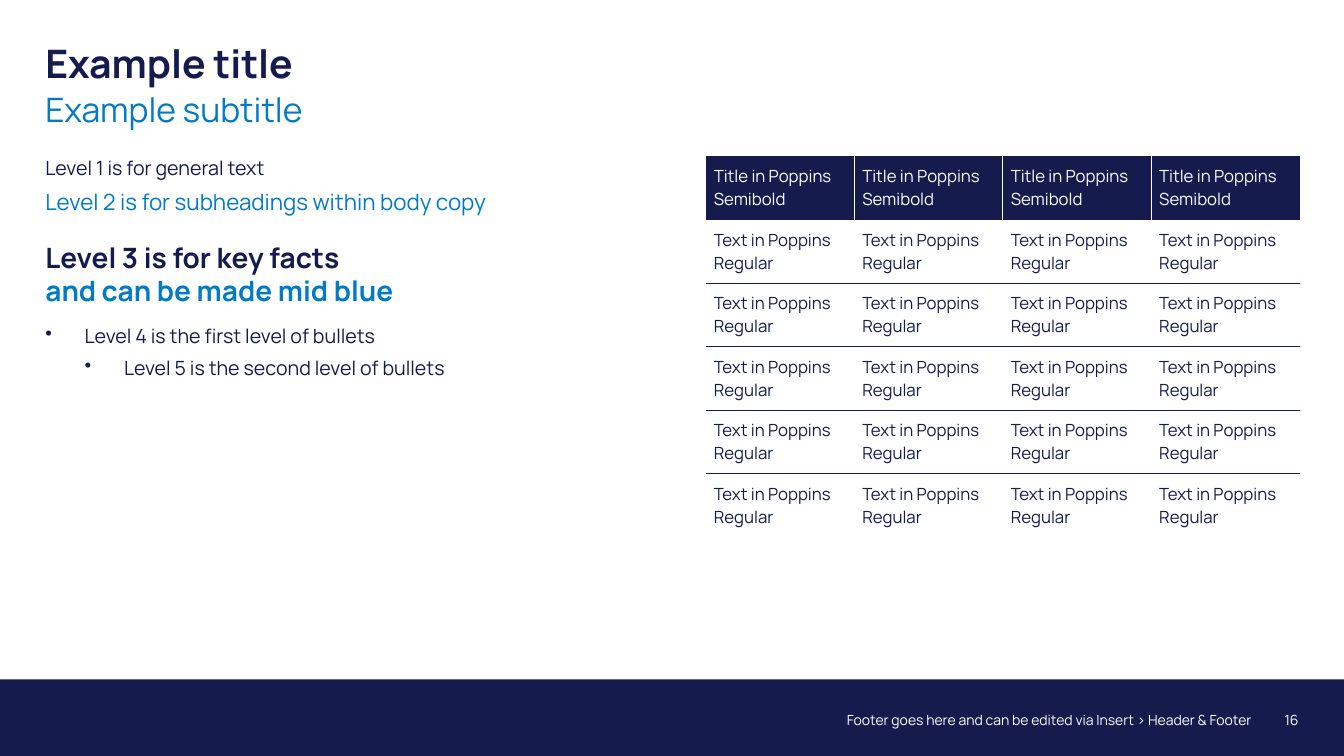
from lxml.etree import SubElement
from pptx import Presentation
from pptx.dml.color import RGBColor
from pptx.enum.shapes import MSO_SHAPE
from pptx.enum.text import MSO_ANCHOR, PP_ALIGN
from pptx.oxml.ns import qn
from pptx.util import Inches, Pt

NAVY = RGBColor(0x16, 0x1B, 0x4E)
BLUE = RGBColor(0x00, 0x7B, 0xC4)
WHITE = RGBColor(0xFF, 0xFF, 0xFF)
FONT = "Manrope"
NO_GRID_STYLE = "{2D5ABB26-0587-4C30-8999-92F81FD0307C}"

WIDTH, HEIGHT = 13.33, 7.5
MARGIN = 0.45
COLUMN_TOP, COLUMN_WIDTH = 1.55, 5.89
FULL_WIDTH = WIDTH - 2 * MARGIN
BAND_TOP = 6.74
FOOTER_TOP, FOOTER_HEIGHT = 7.03, 0.23
TABLE_LEFT, ROW_HEIGHT, CELL_MARGIN = 7, 0.63, 0.08
BULLET_STEP = 0.39

TITLE = "Example title"
SUBTITLE = "Example subtitle"
FOOTER = "Footer goes here and can be edited via Insert > Header & Footer"
PAGE_NUMBER = "16"
# lines as (text, colour), size, bold, space before, space after, bullet depth
BODY = [
    ([("Level 1 is for general text", NAVY)], 14, False, 0, 6, 0),
    ([("Level 2 is for subheadings within body copy", BLUE)], 16, False, 0, 6, 0),
    ([("Level 3 is for key facts ", NAVY), ("and can be made mid blue", BLUE)],
     20, True, 12, 12, 0),
    ([("Level 4 is the first level of bullets", NAVY)], 14, False, 0, 6, 1),
    ([("Level 5 is the second level of bullets", NAVY)], 14, False, 0, 6, 2),
]
TABLE = [["Title in Poppins Semibold"] * 4] + [["Text in Poppins Regular"] * 4] * 5


def set_font(font, size, color=None, bold=False):
    font.name, font.size, font.bold = FONT, Pt(size), bold
    if color is not None:
        font.color.rgb = color


def add_frame(slide, left, top, width, height, anchor=MSO_ANCHOR.TOP):
    """Add a wrapping text box without margins and return its text frame."""
    box = slide.shapes.add_textbox(*map(Inches, (left, top, width, height)))
    frame = box.text_frame
    frame.word_wrap = True
    frame.vertical_anchor = anchor
    frame.margin_left = frame.margin_right = frame.margin_top = frame.margin_bottom = 0
    return frame


def add_line(frame, text, size, color, bold=False, align=PP_ALIGN.LEFT):
    paragraph = frame.paragraphs[0]
    paragraph.text = text
    paragraph.alignment = align
    set_font(paragraph.font, size, color, bold)
    return paragraph


def add_bullet(paragraph, depth):
    properties = paragraph._p.get_or_add_pPr()
    properties.set("marL", str(Inches(BULLET_STEP * depth)))
    properties.set("indent", str(-Inches(BULLET_STEP)))
    SubElement(properties, qn("a:buChar"), char="•")


def add_body(slide):
    frame = add_frame(slide, MARGIN, COLUMN_TOP, COLUMN_WIDTH, 4.88)
    for index, (lines, size, bold, before, after, depth) in enumerate(BODY):
        paragraph = frame.add_paragraph() if index else frame.paragraphs[0]
        if depth:
            add_bullet(paragraph, depth)
        paragraph.space_before, paragraph.space_after = Pt(before), Pt(after)
        set_font(paragraph.font, size, bold=bold)
        for number, (text, color) in enumerate(lines):
            if number:
                paragraph.add_line_break()
            run = paragraph.add_run()
            run.text = text
            set_font(run.font, size, color, bold)


def add_border(cell, side, color):
    line = SubElement(cell._tc.get_or_add_tcPr(), qn(f"a:ln{side}"), w=str(Pt(0.5)))
    SubElement(SubElement(line, qn("a:solidFill")), qn("a:srgbClr"), val=str(color))


def add_table(slide):
    rows, columns = len(TABLE), len(TABLE[0])
    table = slide.shapes.add_table(
        rows, columns, Inches(TABLE_LEFT), Inches(COLUMN_TOP),
        Inches(COLUMN_WIDTH), Inches(ROW_HEIGHT * rows)).table
    table._tbl.tblPr.find(qn("a:tableStyleId")).text = NO_GRID_STYLE
    table.horz_banding = False
    for r, texts in enumerate(TABLE):
        table.rows[r].height = Inches(ROW_HEIGHT)
        for c, text in enumerate(texts):
            cell = table.cell(r, c)
            cell.vertical_anchor = MSO_ANCHOR.MIDDLE
            cell.margin_left = cell.margin_right = Inches(CELL_MARGIN)
            cell.margin_top = cell.margin_bottom = Inches(CELL_MARGIN)
            header = r == 0
            add_line(cell.text_frame, text, 12, WHITE if header else NAVY)
            if header and c > 0:
                add_border(cell, "L", WHITE)
            if header and c < columns - 1:
                add_border(cell, "R", WHITE)
            if r > 1:
                add_border(cell, "T", NAVY)
            if 0 < r < rows - 1:
                add_border(cell, "B", NAVY)
            if header:
                cell.fill.solid()
                cell.fill.fore_color.rgb = NAVY
            else:
                cell.fill.background()


def add_footer(slide):
    for text, left, width in ((FOOTER, 6.67, 5.74), (PAGE_NUMBER, 12.42, 0.46)):
        frame = add_frame(slide, left, FOOTER_TOP, width, FOOTER_HEIGHT, MSO_ANCHOR.MIDDLE)
        add_line(frame, text, 10, WHITE, align=PP_ALIGN.RIGHT)


def main():
    presentation = Presentation()
    presentation.slide_width, presentation.slide_height = Inches(WIDTH), Inches(HEIGHT)
    slide = presentation.slides.add_slide(presentation.slide_layouts[6])

    band = slide.shapes.add_shape(MSO_SHAPE.RECTANGLE, 0, Inches(BAND_TOP),
                                  Inches(WIDTH), Inches(HEIGHT - BAND_TOP))
    band.shadow.inherit = False
    band.fill.solid()
    band.fill.fore_color.rgb = NAVY
    band.line.fill.background()

    title = add_frame(slide, MARGIN, 0.44, FULL_WIDTH, 0.43)
    add_line(title, TITLE, 28, NAVY, bold=True).line_spacing = 0.9
    subtitle = add_frame(slide, MARGIN, 0.88, FULL_WIDTH, 0.43)
    add_line(subtitle, SUBTITLE, 24, BLUE)
    add_body(slide)
    add_table(slide)
    add_footer(slide)
    presentation.save("out.pptx")


if __name__ == "__main__":
    main()
